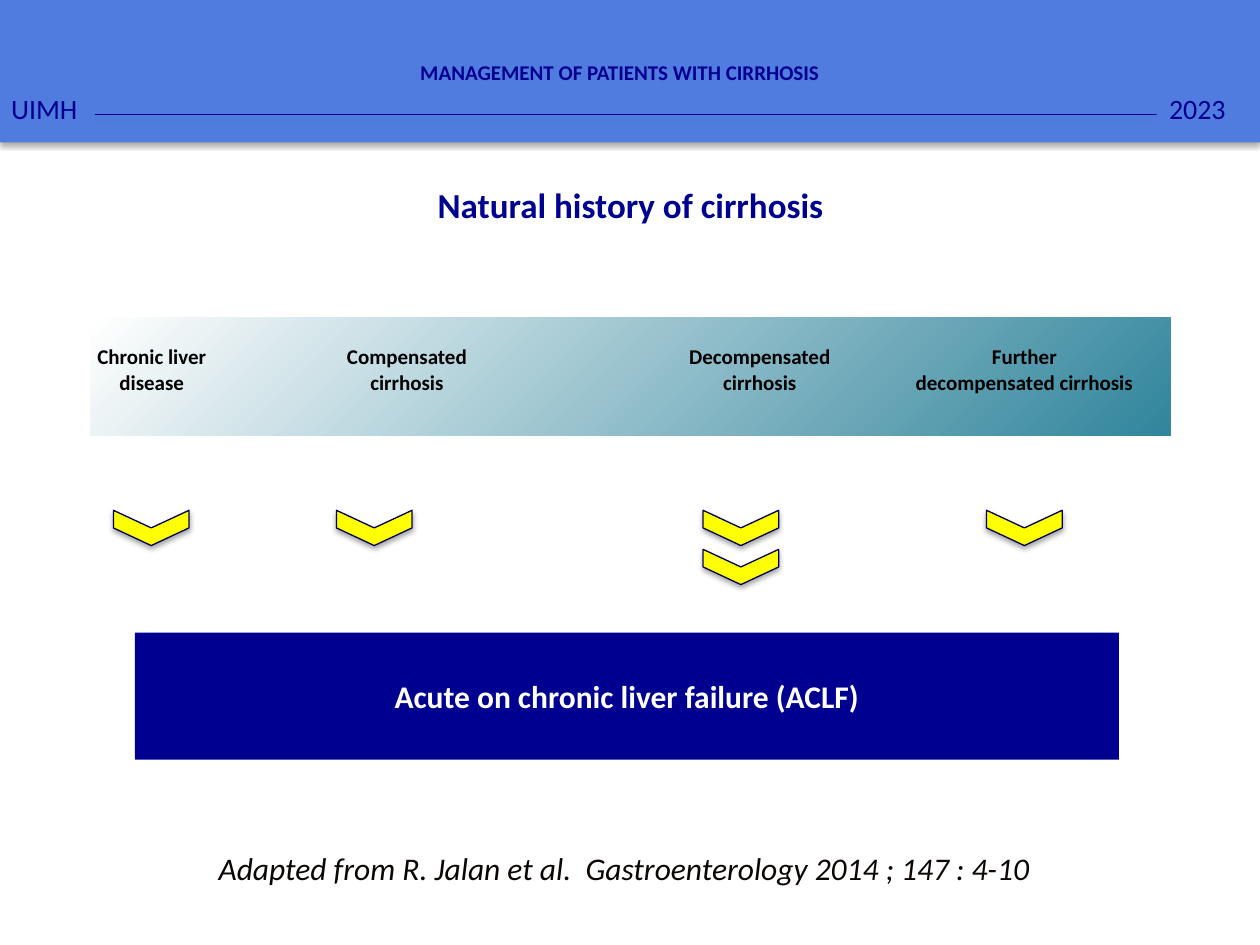
from pptx import Presentation
from pptx.dml.color import RGBColor
from pptx.enum.shapes import MSO_CONNECTOR as Connector, MSO_SHAPE as Shape
from pptx.enum.text import MSO_ANCHOR as Anchor, PP_ALIGN as Align
from pptx.oxml import parse_xml
from pptx.oxml.ns import nsdecls, qn
from pptx.util import Inches, Pt

COLORS = {
    "navy": "000090", "banner": "507CDF", "white": "FFFFFF", "black": "000000",
    "ink": "0B0603", "yellow": "FFFF00", "outline": "00005C", "teal": "31859C",
}
COLUMNS, ROWS = 100, 75


class Sheet:
    font = "Calibri"

    def __init__(self, deck):
        self.cell_width = deck.slide_width / COLUMNS
        self.cell_height = deck.slide_height / ROWS
        self.page = deck.slides.add_slide(deck.slide_layouts[5])

    def place(self, column, row, width, height):
        return (round(column * self.cell_width), round(row * self.cell_height),
                round(width * self.cell_width), round(height * self.cell_height))

    def color(self, name):
        return RGBColor.from_string(COLORS[name])

    def label(self, box, text, size, color, bold=False, italic=False,
              align=Align.CENTER, anchor=Anchor.TOP):
        frame = box.text_frame
        frame.word_wrap = True
        frame.vertical_anchor = anchor
        para = frame.paragraphs[0]
        para.text = text
        para.alignment = align
        font = para.font
        font.name, font.size = self.font, Pt(size)
        font.bold, font.italic = bold, italic
        font.color.rgb = self.color(color)

    def shadow(self, shape, alpha, distance):
        shape._element.spPr.append(parse_xml(
            f'<a:effectLst {nsdecls("a")}><a:outerShdw blurRad="{Pt(3.1)}" '
            f'dist="{Pt(distance)}" dir="5400000" rotWithShape="0">'
            f'<a:srgbClr val="{COLORS["black"]}"><a:alpha val="{alpha}000"/>'
            '</a:srgbClr></a:outerShdw></a:effectLst>'))

    def title(self, text, area):
        title = self.page.shapes.title
        title.left, title.top, title.width, title.height = self.place(*area)
        self.label(title, text, 20, "navy", bold=True)

    def text(self, text, area, size, color, **style):
        box = self.page.shapes.add_textbox(*self.place(*area))
        self.label(box, text, size, color, **style)

    def block(self, area, fill, kind=Shape.RECTANGLE, outline=None, shadow=False):
        block = self.page.shapes.add_shape(kind, *self.place(*area))
        block.fill.solid()
        block.fill.fore_color.rgb = self.color(fill)
        if outline:
            block.line.color.rgb = self.color(outline)
            block.line.width = Pt(0.75)
        else:
            block.line.fill.background()
        if shadow:
            self.shadow(block, 35, 1.8)
        else:
            block.shadow.inherit = False
        return block

    def gradient(self, area, start, end):
        band = self.block(area, start)
        properties = band._element.spPr
        solid = properties.find(qn("a:solidFill"))
        properties.replace(solid, parse_xml(
            f'<a:gradFill rotWithShape="1" {nsdecls("a")}><a:gsLst>'
            f'<a:gs pos="0"><a:srgbClr val="{COLORS[start]}"/></a:gs>'
            f'<a:gs pos="100000"><a:srgbClr val="{COLORS[end]}"/></a:gs></a:gsLst>'
            '<a:path path="circle"><a:fillToRect l="100000" t="100000"/></a:path>'
            '</a:gradFill>'))

    def chevron(self, column, row):
        width, height = 2.8, 6
        area = (column - width / 2, row - height / 2, width, height)
        arrow = self.block(area, "yellow", Shape.CHEVRON, "outline", shadow=True)
        arrow.rotation = 90

    def rule(self, start, end, row):
        left, top, right, _ = self.place(start, row, end, 0)
        line = self.page.shapes.add_connector(Connector.STRAIGHT, left, top, right, top)
        line.line.color.rgb = self.color("navy")
        line.line.width = Pt(0.75)
        self.shadow(line, 38, 1.6)


def main():
    deck = Presentation()
    deck.slide_width, deck.slide_height = Inches(10), Inches(7.5)
    sheet = Sheet(deck)

    sheet.title("Natural history of cirrhosis", (8.8, 14.1, 82.5, 4.4))
    failure = sheet.block((10.7, 50.2, 78.1, 10.1), "navy")
    sheet.label(failure, "Acute on chronic liver failure (ACLF)", 18, "white",
                bold=True, anchor=Anchor.MIDDLE)
    sheet.text("Adapted from R. Jalan et al.  Gastroenterology 2014 ; 147 : 4-10",
               (15.3, 66.9, 68.5, 4), 18, "ink", italic=True)

    for column in (12, 29.7, 58.8, 81.3):
        sheet.chevron(column, 41.9)
    sheet.chevron(58.8, 45)

    sheet.block((0, -0.3, 100, 11.6), "banner", shadow=True)
    sheet.rule(7.5, 91.8, 9.1)
    for text, column, width in (("2023", 91.8, 8.2), ("UIMH", -0.1, 7.3)):
        corner = sheet.block((column, 6.8, width, 3.7), "banner")
        sheet.label(corner, text, 16, "navy", align=Align.LEFT)
    heading = sheet.block((6.7, -0.1, 85, 7.5), "banner")
    heading.text_frame.margin_bottom = Inches(0.07)
    sheet.label(heading, "MANAGEMENT OF PATIENTS WITH CIRRHOSIS", 12, "navy",
                bold=True, anchor=Anchor.BOTTOM)

    sheet.gradient((7.2, 25.2, 85.7, 9.4), "teal", "white")
    stages = (
        ("Chronic liver disease", 4.4, 15.3),
        ("Compensated cirrhosis", 23.8, 17),
        ("Decompensated cirrhosis", 51.4, 17.8),
        ("Further\vdecompensated cirrhosis", 70.7, 21.2),
    )
    for text, column, width in stages:
        sheet.text(text, (column, 26.8, width, 5), 12, "black",
                   bold=True, anchor=Anchor.MIDDLE)

    deck.save("out.pptx")


if __name__ == "__main__":
    main()
